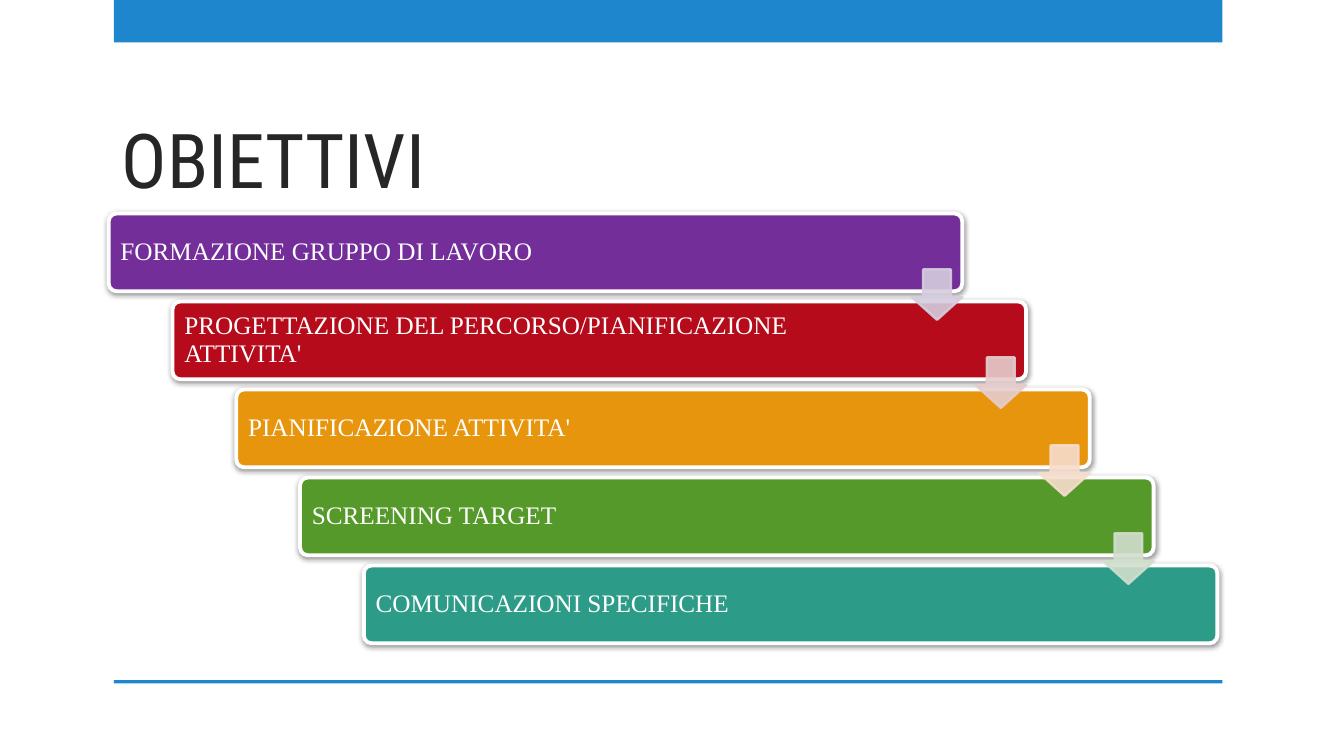
from lxml import etree
from pptx import Presentation
from pptx.dml.color import RGBColor
from pptx.enum.shapes import MSO_SHAPE
from pptx.enum.text import MSO_ANCHOR, MSO_AUTO_SIZE, PP_ALIGN
from pptx.oxml.ns import qn
from pptx.util import Cm, Pt

RECT = MSO_SHAPE.RECTANGLE
ROUNDED = MSO_SHAPE.ROUNDED_RECTANGLE
DOWN_ARROW = MSO_SHAPE.DOWN_ARROW
LEFT = PP_ALIGN.LEFT
BOTTOM, MIDDLE = MSO_ANCHOR.BOTTOM, MSO_ANCHOR.MIDDLE
NO_AUTOFIT = MSO_AUTO_SIZE.NONE

WHITE = RGBColor(0xFF, 0xFF, 0xFF)
BLUE = RGBColor(0x1D, 0x86, 0xCD)
DARK = RGBColor(0x26, 0x26, 0x26)
PURPLE = RGBColor(0x73, 0x2E, 0x9A)
RED = RGBColor(0xB5, 0x0B, 0x1B)
ORANGE = RGBColor(0xE8, 0x95, 0x0E)
GREEN = RGBColor(0x55, 0x99, 0x2B)
TEAL = RGBColor(0x2C, 0x9C, 0x89)
PALE_PURPLE = RGBColor(0xD5, 0xCD, 0xDE)
PALE_RED = RGBColor(0xE5, 0xCC, 0xCD)
PALE_ORANGE = RGBColor(0xF6, 0xDD, 0xCC)
PALE_GREEN = RGBColor(0xD1, 0xDE, 0xCD)

TITLE_FONT = "Roboto Condensed"
STEP_FONT = "Times New Roman"

# Text, bar colour, colour of the arrow to the next bar
STEPS = [
    ("FORMAZIONE GRUPPO DI LAVORO", PURPLE, PALE_PURPLE),
    ("PROGETTAZIONE DEL PERCORSO/PIANIFICAZIONE ATTIVITA'", RED, PALE_RED),
    ("PIANIFICAZIONE ATTIVITA'", ORANGE, PALE_ORANGE),
    ("SCREENING TARGET", GREEN, PALE_GREEN),
    ("COMUNICAZIONI SPECIFICHE", TEAL, None),
]


def add_filled(s, kind, x, y, w, h, fill, line=None, line_width=0):
    sp = s.shapes.add_shape(kind, x, y, w, h)
    sp.shadow.inherit = False
    sp.fill.solid()
    sp.fill.fore_color.rgb = fill
    if line is None:
        sp.line.fill.background()
    else:
        sp.line.color.rgb = line
        sp.line.width = Pt(line_width)
    return sp


def add_soft_shadow(sp):
    effects = sp._element.spPr.find(qn("a:effectLst"))
    shadow = etree.SubElement(effects, qn("a:outerShdw"), blurRad=str(Pt(4)),
                              dist=str(Pt(1)), dir=str(88 * 60000), rotWithShape="0")
    color = etree.SubElement(shadow, qn("a:srgbClr"), val="000000")
    etree.SubElement(color, qn("a:alpha"), val="40000")


def set_opacity(sp, percent):
    for color in sp._element.spPr.iter(qn("a:srgbClr")):
        etree.SubElement(color, qn("a:alpha"), val=str(percent * 1000))


def add_frame(s, x, y, w, h):
    """Blue band along the top and thin rule along the bottom."""
    rule_h = Cm(0.08)
    add_filled(s, RECT, x, y, w, Cm(1.07), BLUE)
    add_filled(s, RECT, x, y + h - rule_h, w, rule_h, BLUE)


def add_title(s, x, y, w, h, text):
    title = s.shapes.title
    title.left, title.top, title.width, title.height = x, y, w, h
    tf = title.text_frame
    tf.text = text
    tf.auto_size = NO_AUTOFIT
    tf.vertical_anchor = BOTTOM
    p = tf.paragraphs[0]
    p.alignment = LEFT
    p.font.name = TITLE_FONT
    p.font.size = Pt(54)
    p.font.color.rgb = DARK


def add_bar(s, x, y, w, h, text, fill):
    sp = add_filled(s, ROUNDED, x, y, w, h, fill, WHITE, 2.75)
    sp.adjustments[0] = 0.1
    add_soft_shadow(sp)
    tf = sp.text_frame
    tf.word_wrap = True
    tf.vertical_anchor = MIDDLE
    tf.margin_left = Cm(0.24)
    tf.margin_right = Cm(3.1)  # keeps the text clear of the arrows
    tf.margin_top = tf.margin_bottom = Cm(0.18)
    p = tf.paragraphs[0]
    p.text = text
    p.alignment = LEFT
    p.line_spacing = 0.9
    p.font.name = STEP_FONT
    p.font.size = Pt(18)
    p.font.color.rgb = WHITE


def add_arrow(s, x, y, size, color):
    sp = add_filled(s, DOWN_ARROW, x, y, size, size, color, color, 1.75)
    sp.adjustments[0] = 0.55
    sp.adjustments[1] = 0.45
    set_opacity(sp, 90)


def add_staircase(s, x, y, w, h, steps):
    """Bars stepping down to the right, linked by arrows."""
    bar_w, bar_h, arrow = Cm(21.51), Cm(1.96), Cm(1.27)
    dx = (w - bar_w) // (len(steps) - 1)
    dy = (h - bar_h) // (len(steps) - 1)
    for i, (text, fill, _) in enumerate(steps):
        add_bar(s, x + i * dx, y + i * dy, bar_w, bar_h, text, fill)
    # Arrows lie in front of all bars
    for i, (_, _, pale) in enumerate(steps[:-1]):
        add_arrow(s, x + i * dx + bar_w - arrow, y + i * dy + Cm(1.41), arrow, pale)


def main():
    prs = Presentation()
    prs.slide_width, prs.slide_height = Cm(33.87), Cm(19.05)
    s = prs.slides.add_slide(prs.slide_layouts[5])
    add_frame(s, Cm(2.87), Cm(0), Cm(27.94), Cm(17.22))
    add_title(s, Cm(2.82), Cm(2.62), Cm(20.96), Cm(2.64), "OBIETTIVI")
    add_staircase(s, Cm(2.74), Cm(5.38), Cm(27.94), Cm(10.83), STEPS)
    prs.save("out.pptx")


if __name__ == "__main__":
    main()
